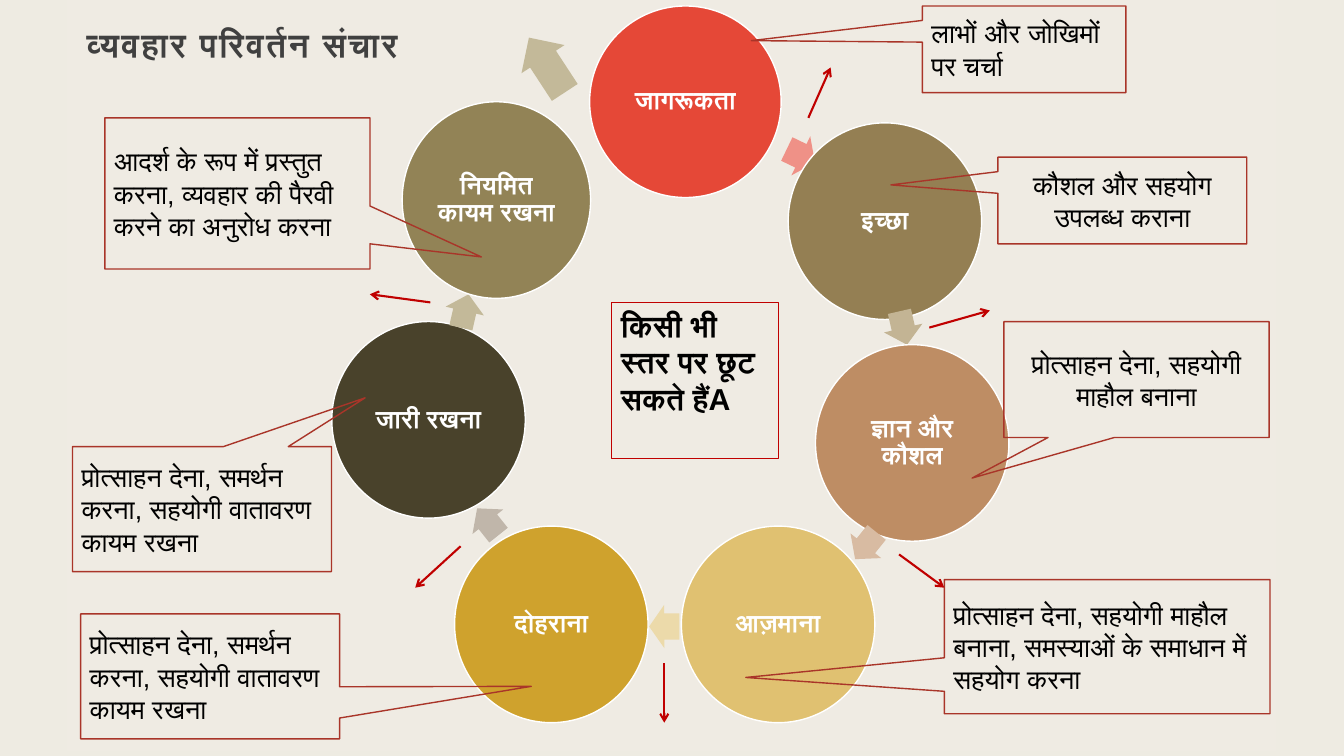
from lxml import etree
from pptx import Presentation
from pptx import util as u
from pptx.dml.color import RGBColor
from pptx.enum import shapes, text
from pptx.oxml import ns

FONT = "Arial"
LEFT, CENTER = text.PP_ALIGN.LEFT, text.PP_ALIGN.CENTER
TOP, MIDDLE = text.MSO_ANCHOR.TOP, text.MSO_ANCHOR.MIDDLE
KIND = shapes.MSO_SHAPE
ENCOURAGE = "प्रोत्साहन देना, समर्थन करना, सहयोगी वातावरण कायम रखना"

# Circle: box, fill, label; then the arrow to the next stage: box, angle, fill
STAGES = [
    ((184.2, 0.3, 136.8, 136.8), "E54837", "जागरूकता",
     (323.9, 91.8, 22.3, 31), 25.7, "EF9187"),
    ((326, 83.8, 138.2, 140.4), "947F53", "इच्छा",
     (395.9, 216.3, 24.5, 28.1), 77.1, "C3B494"),
    ((345.5, 242.2, 138.2, 140.4), "BE8D64", "ज्ञान और कौशल",
     (369.2, 371.8, 24.5, 28.1), 128.8, "D8BBA2"),
    ((249.7, 371.8, 138.2, 140.4), "E0C171", "आज़माना",
     (226.7, 428, 21.6, 31), 179.8, "ECDAAA"),
    ((87.7, 371.8, 138.2, 140.4), "CFA22D", "दोहराना",
     (99.2, 354.6, 24.5, 28.1), 231.4, "C0B6AA"),
    ((0, 225.7, 138.2, 140.4), "49422B", "जारी रखना",
     (82.7, 204.1, 24.5, 28.1), 282.9, "C3B999"),
    ((50.3, 68.7, 134.6, 140.4), "928356", "नियमित कायम रखना",
     (130.2, 24.1, 46.8, 36.7), 236.8, "C3B999"),
]

# Ways out of the ring: start x, y and end x, y
EXITS = [
    (340.4, 80.2, 356.3, 44.2),
    (70.4, 212, 27.2, 206.2),
    (92, 386.2, 59.6, 415.8),
    (237.5, 469.8, 237.5, 512.2),
    (405.2, 392, 437.6, 415.8),
    (426.8, 230, 470, 217.8),
]

# Box, callout tip as a share of the box, alignment, wording
CALLOUTS = [
    ((658.8, 4.3, 145.4, 61.9), (-1.34, -0.1), LEFT, "लाभों और जोखिमों पर चर्चा"),
    ((74.9, 84.2, 189.4, 108), (0.92, 0.42), LEFT,
     "आदर्श के रूप में प्रस्तुत करना, व्यवहार की पैरवी करने का अनुरोध करना"),
    ((712.8, 112.3, 177.8, 61.9), (-0.93, -0.18), CENTER,
     "कौशल और सहयोग उपलब्ध कराना"),
    ((674.6, 414, 232.6, 95.8), (-1.11, 0.23), LEFT,
     "प्रोत्साहन देना, सहयोगी माहौल बनाना, समस्याओं के समाधान में सहयोग करना"),
    ((717.1, 229.7, 189.4, 82.8), (-0.62, 0.85), CENTER,
     "प्रोत्साहन देना, सहयोगी माहौल बनाना"),
    ((57.6, 438.5, 185, 89.3), (1.24, 0.08), LEFT, ENCOURAGE),
    ((51.8, 319, 185, 89.3), (0.63, -0.89), LEFT, ENCOURAGE),
]


def color(value):
    return RGBColor.from_string(value)


def points(values):
    return [u.Pt(value) for value in values]


def shifted(box, left, top):
    x, y, width, height = box
    return left + x, top + y, width, height


def add_shape(page, kind, box, fill=None, line=None, weight=1, adjust=()):
    shape = page.shapes.add_shape(kind, *points(box))
    shape.shadow.inherit = False
    for index, value in enumerate(adjust):
        shape.adjustments[index] = value
    if fill:
        shape.fill.solid()
        shape.fill.fore_color.rgb = color(fill)
    else:
        shape.fill.background()
    if line:
        shape.line.color.rgb = color(line)
        shape.line.width = u.Pt(weight)
    else:
        shape.line.fill.background()
    return shape


def write(shape, words, size, ink, bold=False, align=LEFT, anchor=MIDDLE,
          insets=(6.5, 3.6, 6.5, 3.6), spacing=1.0):
    """Fill a shape with one formatted paragraph and return its run."""
    frame = shape.text_frame
    frame.word_wrap = True
    frame.auto_size = text.MSO_AUTO_SIZE.NONE
    frame.vertical_anchor = anchor
    (frame.margin_left, frame.margin_top,
     frame.margin_right, frame.margin_bottom) = points(insets)
    para = frame.paragraphs[0]
    para.alignment = align
    para.line_spacing = spacing
    para.space_before = u.Pt(0)
    span = para.add_run()
    span.text = words
    span.font.size = u.Pt(size)
    span.font.bold = bold
    span.font.color.rgb = color(ink)
    span.font.name = FONT
    complex_font = etree.SubElement(span.font._element, ns.qn("a:cs"))
    complex_font.set("typeface", FONT)
    return span


def add_title(page, box):
    title = page.shapes.title
    title.left, title.top, title.width, title.height = points(box)
    span = write(title, "व्यवहार परिवर्तन संचार", 24, "404040", bold=True,
                 anchor=TOP, insets=(8.6, 8.6, 8.6, 7.2), spacing=1.3)
    span.font._element.set("spc", "150")


def add_panel(page, box):
    """Place the pale panel behind the title."""
    panel = add_shape(page, KIND.RECTANGLE, box, "EFEBE3")
    page.shapes.title.element.addprevious(panel.element)


def add_exit(page, ends):
    arrow = page.shapes.add_connector(shapes.MSO_CONNECTOR.STRAIGHT, *points(ends))
    arrow.line.color.rgb = color("C00000")
    arrow.line.width = u.Pt(1.5)
    head = etree.SubElement(arrow.line._get_or_add_ln(), ns.qn("a:tailEnd"))
    head.set("type", "arrow")
    etree.SubElement(arrow.element.spPr, ns.qn("a:effectLst"))


def add_ring(page, left, top):
    """Draw the seven stages, the box in the middle and the ways out."""
    for circle_box, fill, label, arrow_box, angle, arrow_fill in STAGES:
        circle = add_shape(page, KIND.OVAL, shifted(circle_box, left, top), fill, "FFFFFF")
        write(circle, label, 18, "FFFFFF", bold=True, align=CENTER,
              insets=(2, 2, 2, 2), spacing=0.9)
        arrow = add_shape(page, KIND.RIGHT_ARROW, shifted(arrow_box, left, top),
                          arrow_fill, adjust=(0.6, 0.5))
        arrow.rotation = angle
    middle = add_shape(page, KIND.RECTANGLE, shifted((200, 212, 118.8, 111.6), left, top),
                       line="C00000", weight=0.75)
    write(middle, "किसी भी स्तर पर छूट सकते हैंA", 21.6, "000000", bold=True, anchor=TOP)
    for x1, y1, x2, y2 in EXITS:
        add_exit(page, (left + x1, top + y1, left + x2, top + y2))


def add_callouts(page):
    for box, tip, align, words in CALLOUTS:
        callout = add_shape(page, KIND.RECTANGULAR_CALLOUT, box, line="A93529", adjust=tip)
        write(callout, words, 19.2, "000000", align=align)


def main():
    deck = Presentation()
    deck.slide_width, deck.slide_height = points((960, 540))
    page = deck.slides.add_slide(deck.slide_layouts[5])
    page.background.fill.solid()
    page.background.fill.fore_color.rgb = color("EEEBE2")
    add_title(page, (53.3, 0, 324, 49.7))
    add_panel(page, (48, -3.6, 864, 540))
    add_ring(page, 237, 4)
    add_callouts(page)
    deck.save("out.pptx")


if __name__ == "__main__":
    main()
